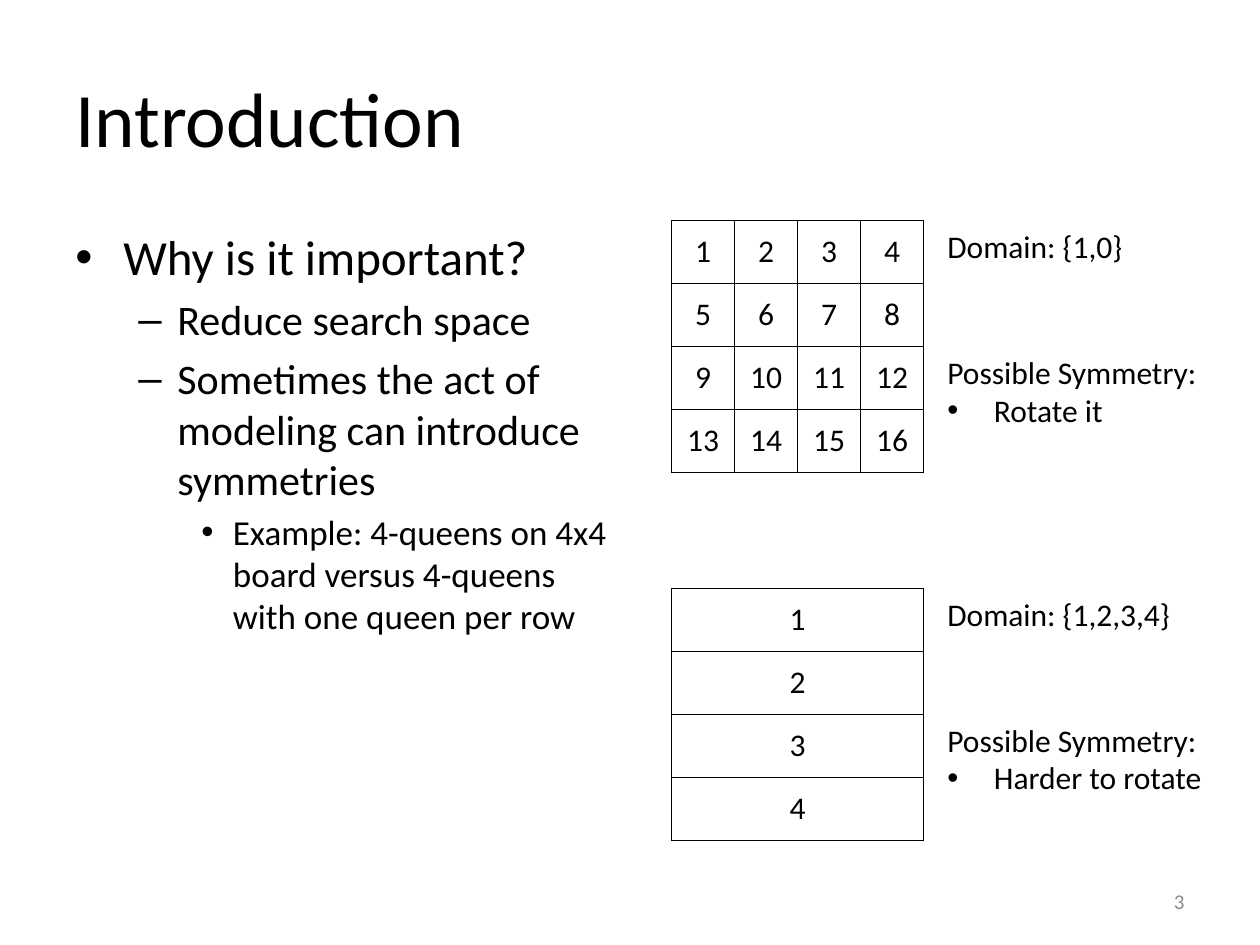
import pptx
import pptx.dml.color
import pptx.enum.text
import pptx.oxml
import pptx.oxml.ns
import pptx.util
from pptx.util import Inches

COLORS = {"ink": "000000", "muted": "8C8C8C", "paper": "FFFFFF"}
FONT = "Calibri"
ALIGN = pptx.enum.text.PP_ALIGN
ANCHOR = pptx.enum.text.MSO_ANCHOR
CELL = 0.5


def add_xml(parent, xml):
    """Append a drawing element given as text to the parent."""
    namespace = pptx.oxml.ns.nsdecls("a")
    parent.append(pptx.oxml.parse_xml(xml.replace(" ", f" {namespace} ", 1)))


def write_run(paragraph, text, size, color="ink"):
    """Add one formatted run to a paragraph."""
    run = paragraph.add_run()
    run.text = text
    run.font.name = FONT
    run.font.size = pptx.util.Pt(size)
    run.font.color.rgb = pptx.dml.color.RGBColor.from_string(COLORS[color])


def set_bullet(paragraph, mark, indent, hanging):
    """Give a paragraph a hanging bullet."""
    properties = paragraph._p.get_or_add_pPr()
    properties.set("marL", str(Inches(indent)))
    properties.set("indent", str(-Inches(hanging)))
    add_xml(properties, '<a:buFont typeface="Arial"/>')
    add_xml(properties, f'<a:buChar char="{mark}"/>')


def add_frame(slide, box, anchor=ANCHOR.TOP):
    """Add a wrapping text box and return its text frame."""
    frame = slide.shapes.add_textbox(*map(Inches, box)).text_frame
    frame.word_wrap = True
    frame.vertical_anchor = anchor
    return frame


def add_line(slide, box, text, size, color="ink", align=ALIGN.LEFT):
    """Add a single vertically centred line of text."""
    paragraph = add_frame(slide, box, ANCHOR.MIDDLE).paragraphs[0]
    paragraph.alignment = align
    write_run(paragraph, text, size, color)


def add_outline(slide, box, points):
    """Add the bulleted outline, styled by level."""
    styles = [("•", 0.38, 0.38, 28), ("–", 0.81, 0.31, 24), ("•", 1.25, 0.25, 20)]
    frame = add_frame(slide, box)
    for index, (level, text) in enumerate(points):
        mark, indent, hanging, size = styles[level]
        paragraph = frame.add_paragraph() if index else frame.paragraphs[0]
        paragraph.level = level
        paragraph.space_before = pptx.util.Pt(size * 0.2)
        set_bullet(paragraph, mark, indent, hanging)
        write_run(paragraph, text, size)


def style_cell(cell, text):
    """Fill one board square with centred text and thin borders."""
    cell.margin_left = cell.margin_right = cell.margin_top = cell.margin_bottom = 0
    cell.vertical_anchor = ANCHOR.MIDDLE
    properties = cell._tc.get_or_add_tcPr()
    for side in "LRTB":
        add_xml(
            properties,
            f'<a:ln{side} w="12700"><a:solidFill><a:srgbClr val="{COLORS["ink"]}"/>'
            f"</a:solidFill></a:ln{side}>",
        )
    cell.fill.background()
    paragraph = cell.text_frame.paragraphs[0]
    paragraph.alignment = ALIGN.CENTER
    write_run(paragraph, text, 18)


def add_board(slide, left, top, columns):
    """Add a four-row board numbered row by row."""
    rows, side = 4, Inches(4 * CELL)
    board = slide.shapes.add_table(
        rows, columns, Inches(left), Inches(top), side, side
    ).table
    board.first_row = board.horz_banding = False
    for row in range(rows):
        for column in range(columns):
            style_cell(board.cell(row, column), str(row * columns + column + 1))


def add_model(slide, left, top, columns, domain, symmetry):
    """Add a board with its domain and symmetry notes beside it."""
    add_board(slide, left, top, columns)
    notes_left = left + 2.09
    domain_note = add_frame(slide, (notes_left, top, 2.42, 0.4))
    write_run(domain_note.paragraphs[0], f"Domain: {domain}", 18)
    symmetry_note = add_frame(slide, (notes_left, top + 2 * CELL, 2.58, 0.71))
    write_run(symmetry_note.paragraphs[0], "Possible Symmetry:", 18)
    example = symmetry_note.add_paragraph()
    set_bullet(example, "•", 0.37, 0.37)
    write_run(example, symmetry, 18)


def main():
    """Build and save the slide."""
    deck = pptx.Presentation()
    deck.slide_width, deck.slide_height = Inches(10), Inches(7.5)
    slide = deck.slides.add_slide(deck.slide_layouts[6])
    background = slide.background.fill
    background.solid()
    background.fore_color.rgb = pptx.dml.color.RGBColor.from_string(COLORS["paper"])

    add_line(slide, (0.5, 0.3, 9, 1.25), "Introduction", 44)
    add_outline(slide, (0.5, 1.75, 4.42, 4.95), [
        (0, "Why is it important?"),
        (1, "Reduce search space"),
        (1, "Sometimes the act of modeling can introduce symmetries"),
        (2, "Example: 4-queens on 4x4 board versus 4-queens with one queen per row"),
    ])
    add_model(slide, 5.33, 1.75, 4, "{1,0}", "Rotate it")
    add_model(slide, 5.33, 4.67, 1, "{1,2,3,4}", "Harder to rotate")
    add_line(slide, (7.17, 6.95, 2.33, 0.4), "3", 12, "muted", ALIGN.RIGHT)
    deck.save("out.pptx")


if __name__ == "__main__":
    main()
